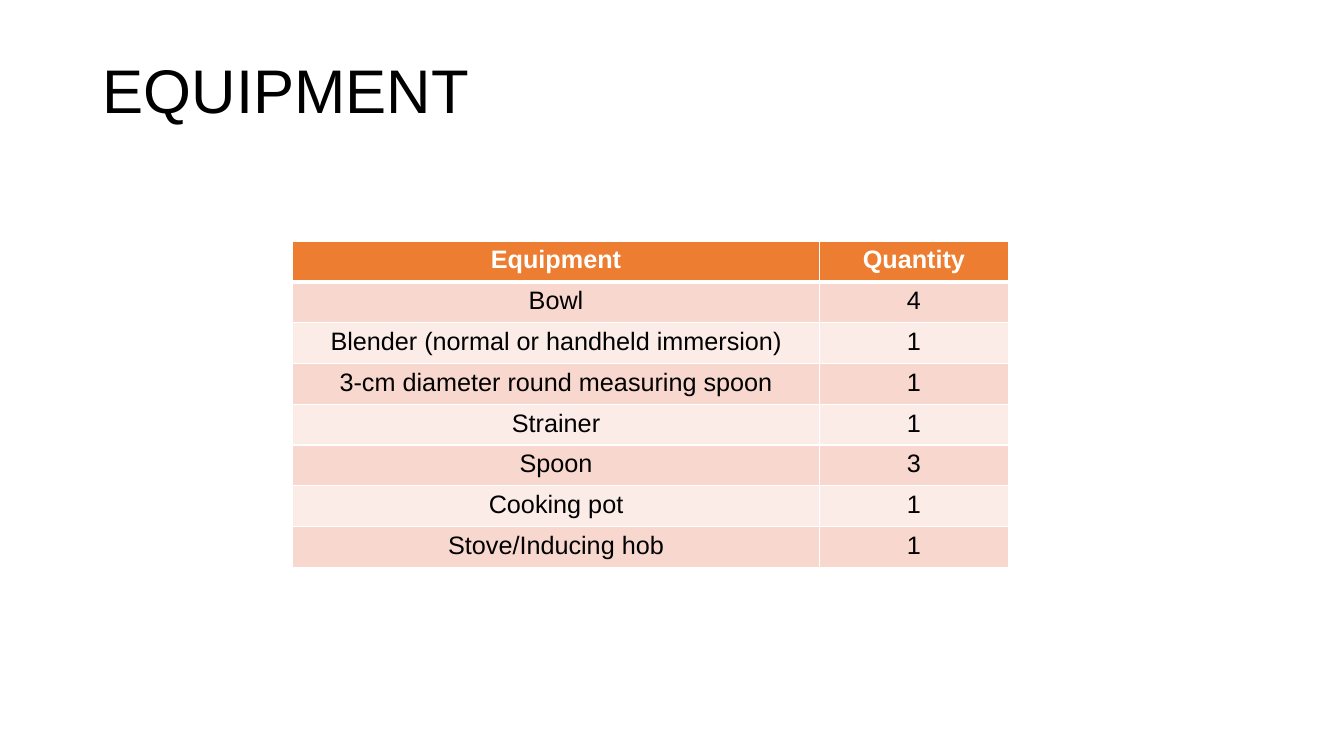
from lxml.etree import SubElement
from pptx import Presentation
from pptx.dml.color import RGBColor
from pptx.enum.text import MSO_ANCHOR, PP_ALIGN
from pptx.oxml.ns import qn
from pptx.util import Inches, Pt

COLORS = {
    "text": "000000",
    "white": "FFFFFF",
    "header": "ED7D31",
    "odd_row": "F8D7CE",
    "even_row": "FCECE8",
}

EQUIPMENT = [
    ("Equipment", "Quantity"),
    ("Bowl", "4"),
    ("Blender (normal or handheld immersion)", "1"),
    ("3-cm diameter round measuring spoon", "1"),
    ("Strainer", "1"),
    ("Spoon", "3"),
    ("Cooking pot", "1"),
    ("Stove/Inducing hob", "1"),
]


class SlideBuilder:
    font_name = "Arial"

    def __init__(self, slide):
        self.slide = slide

    def format_text(self, paragraph, size, color, bold=False):
        for run in paragraph.runs:
            run.font.name = self.font_name
            run.font.size = Pt(size)
            run.font.bold = bold
            run.font.color.rgb = RGBColor.from_string(COLORS[color])

    def add_title(self, text, left, top, width, height):
        title = self.slide.shapes.title
        title.left, title.top = Inches(left), Inches(top)
        title.width, title.height = Inches(width), Inches(height)
        text_frame = title.text_frame
        text_frame.text = text
        text_frame.word_wrap = True
        text_frame.vertical_anchor = MSO_ANCHOR.MIDDLE
        paragraph = text_frame.paragraphs[0]
        paragraph.alignment = PP_ALIGN.LEFT
        paragraph.line_spacing = 0.9
        self.format_text(paragraph, 44, "text")

    def add_table(self, rows, left, top, column_widths, height):
        table = self.slide.shapes.add_table(
            len(rows), len(column_widths), Inches(left), Inches(top),
            Inches(sum(column_widths)), Inches(height)).table
        for column, width in zip(table.columns, column_widths):
            column.width = Inches(width)
        for row_index, row in enumerate(rows):
            for column_index, text in enumerate(row):
                self.fill_cell(table.cell(row_index, column_index), text, row_index)

    def fill_cell(self, cell, text, row_index):
        is_header = row_index == 0
        self.add_borders(cell, top=3 if row_index == 1 else 1, bottom=3 if is_header else 1)
        band = "header" if is_header else ("even_row", "odd_row")[row_index % 2]
        cell.fill.solid()
        cell.fill.fore_color.rgb = RGBColor.from_string(COLORS[band])
        cell.text_frame.text = text
        paragraph = cell.text_frame.paragraphs[0]
        paragraph.alignment = PP_ALIGN.CENTER
        self.format_text(paragraph, 18, "white" if is_header else "text", is_header)

    def add_borders(self, cell, top, bottom):
        """Draw white cell borders; the widths are in points."""
        properties = cell._tc.get_or_add_tcPr()
        for side, width in (("L", 1), ("R", 1), ("T", top), ("B", bottom)):
            line = SubElement(properties, qn(f"a:ln{side}"), w=str(Pt(width)))
            fill = SubElement(line, qn("a:solidFill"))
            SubElement(fill, qn("a:srgbClr"), val=COLORS["white"])


def main():
    presentation = Presentation()
    presentation.slide_width = Inches(13.33)
    presentation.slide_height = Inches(7.5)
    title_only_layout = presentation.slide_layouts[5]
    builder = SlideBuilder(presentation.slides.add_slide(title_only_layout))
    builder.add_title("EQUIPMENT", 0.92, 0.2, 11.5, 1.45)
    builder.add_table(EQUIPMENT, 2.9, 2.39, (5.23, 1.87), 3.24)
    presentation.save("out.pptx")


if __name__ == "__main__":
    main()
